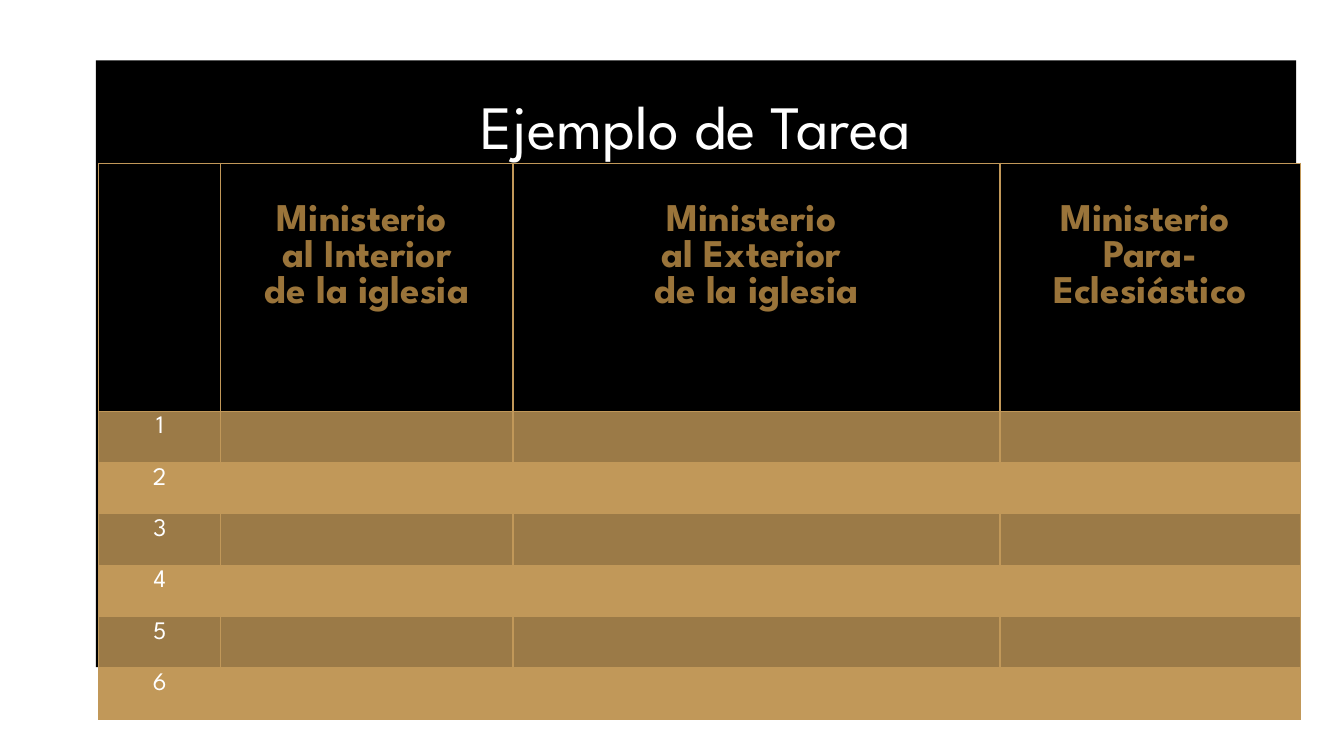
from lxml import etree
from pptx import Presentation
from pptx.dml.color import RGBColor
from pptx.enum.text import MSO_ANCHOR, MSO_AUTO_SIZE, PP_ALIGN
from pptx.oxml.ns import qn
from pptx.util import Pt

CENTER = PP_ALIGN.CENTER
TOP = MSO_ANCHOR.TOP
NO_FIT = MSO_AUTO_SIZE.NONE

FONT = "League Spartan"
BLACK, WHITE = "000000", "FFFFFF"
BRONZE, DARK_TAN, TAN = "9A743A", "9B7A47", "C19859"

COLUMN_WIDTHS = [87.1, 208.8, 347.8, 214.6]
HEADER_HEIGHT, ROW_HEIGHT = 177.1, 36.7
HEADERS = [
    [],
    ["Ministerio ", "al Interior", "de la iglesia"],
    ["Ministerio ", "al Exterior ", "de la iglesia"],
    ["Ministerio ", "Para-Eclesiástico"],
]
TASK_COUNT = 6


def rgb(value):
    return RGBColor.from_string(value)


def paint(obj, color):
    obj.fill.solid()
    obj.fill.fore_color.rgb = rgb(color)


def write(tf, lines, size=18, color=WHITE, bold=False):
    for i, line in enumerate(lines):
        p = tf.paragraphs[0] if i == 0 else tf.add_paragraph()
        p.alignment = CENTER
        r = p.add_run()
        r.text = line
        r.font.name = FONT
        r.font.size = Pt(size)
        r.font.bold = bold
        r.font.color.rgb = rgb(color)


def add_borders(cell, color, width=1):
    tc_pr = cell._tc.get_or_add_tcPr()
    for i, side in enumerate(("lnL", "lnR", "lnT", "lnB")):
        ln = etree.Element(qn(f"a:{side}"), w=str(Pt(width)))
        fill = etree.SubElement(ln, qn("a:solidFill"))
        etree.SubElement(fill, qn("a:srgbClr"), val=color)
        tc_pr.insert(i, ln)


def add_title(s, text):
    sp = s.shapes.title
    sp.left, sp.top, sp.width, sp.height = Pt(68.4), Pt(43.2), Pt(857.5), Pt(433.4)
    paint(sp, BLACK)
    tf = sp.text_frame
    tf.auto_size = NO_FIT
    tf.vertical_anchor = TOP
    tf.margin_top = Pt(19.6)
    write(tf, [text], size=44)


def add_task_table(s):
    height = HEADER_HEIGHT + TASK_COUNT * ROW_HEIGHT
    frame = s.shapes.add_table(TASK_COUNT + 1, len(COLUMN_WIDTHS), Pt(70.6), Pt(116.6),
                               Pt(sum(COLUMN_WIDTHS)), Pt(height))
    table = frame.table
    for column, width in zip(table.columns, COLUMN_WIDTHS):
        column.width = Pt(width)
    for i, row in enumerate(table.rows):
        row.height = Pt(ROW_HEIGHT if i else HEADER_HEIGHT)
        color = BLACK if i == 0 else DARK_TAN if i % 2 else TAN
        for cell in row.cells:
            paint(cell, color)
            add_borders(cell, TAN)
        if i:
            write(row.cells[0].text_frame, [str(i)])
    for cell, lines in zip(table.rows[0].cells, HEADERS):
        cell.margin_top = Pt(29.4)
        write(cell.text_frame, lines, size=28, color=BRONZE, bold=True)


def main():
    prs = Presentation()
    prs.slide_width, prs.slide_height = Pt(960), Pt(540)
    s = prs.slides.add_slide(prs.slide_layouts[5])
    add_title(s, "Ejemplo de Tarea")
    add_task_table(s)
    prs.save("out.pptx")


if __name__ == "__main__":
    main()
